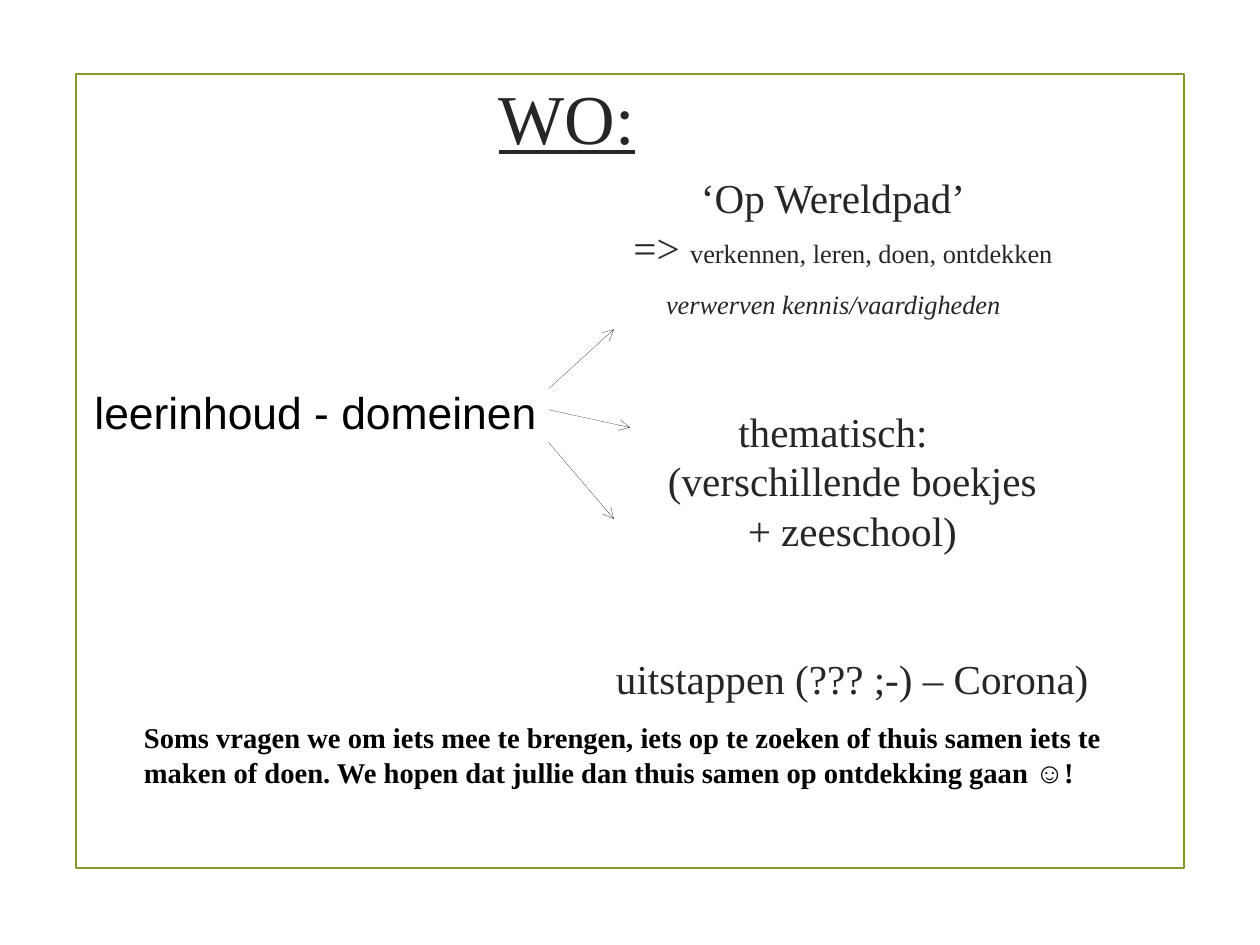
"""Build the WO slide with its learning domains."""
from dataclasses import dataclass
from typing import Optional

import lxml.etree
import pptx
import pptx.dml.color
import pptx.enum.shapes
import pptx.enum.text
import pptx.oxml.ns
import pptx.slide
import pptx.shapes.autoshape
import pptx.shapes.connector
import pptx.util

Cm = pptx.util.Cm
Align = pptx.enum.text.PP_ALIGN
Anchor = pptx.enum.text.MSO_ANCHOR


@dataclass(frozen=True)
class Theme:
    serif: str = "Times New Roman"
    sans: str = "Arial"
    green: str = "83992A"
    dark: str = "262626"
    black: str = "000000"
    title_size: float = 44.1
    body_size: float = 25.9
    detail_size: float = 16.6
    label_size: float = 28
    note_size: float = 18


THEME = Theme()


@dataclass(frozen=True)
class Run:
    text: str
    size: float
    color: str = THEME.dark
    font: str = THEME.serif
    bold: bool = False
    italic: bool = False
    underline: bool = False


@dataclass(frozen=True)
class Paragraph:
    lines: tuple[tuple[Run, ...], ...]
    align: Align = Align.LEFT
    before: float = 0
    after: float = 0
    margin: float = 0
    indent: float = 0


@dataclass(frozen=True)
class TextBox:
    left: float
    top: float
    width: float
    height: float
    paragraphs: tuple[Paragraph, ...]
    anchor: Anchor = Anchor.TOP
    wrap: bool = True


@dataclass(frozen=True)
class Arrow:
    start_y: float
    end_x: float
    end_y: float
    from_label: bool = False


def body_paragraph(*lines: tuple[Run, ...], before: float = 0, after: float = 6.6,
                   indent: float = -0.86) -> Paragraph:
    """Return a centred paragraph in the style of the domain list."""
    return Paragraph(lines, Align.CENTER, before, after, 0.86, indent)


def body_line(text: str) -> tuple[Run, ...]:
    """Return one line in the main body size."""
    return (Run(text, THEME.body_size),)


TITLE = TextBox(0, 0.84, 25.2, 3.5, (
    Paragraph(((Run("WO:", THEME.title_size, underline=True),),), Align.CENTER),
), Anchor.MIDDLE)

DOMAINS = TextBox(11.81, 3.71, 13.41, 12.6, (
    body_paragraph(body_line("‘Op Wereldpad’"), after=0),
    body_paragraph(
        (Run("=> ", THEME.body_size),
         Run("verkennen, leren, doen, ontdekken", THEME.detail_size)),
        indent=-0.43),
    body_paragraph(
        (Run("verwerven kennis/vaardigheden", THEME.detail_size, italic=True),),
        before=4),
    body_paragraph(
        body_line("thematisch:"),
        body_line("(verschillende boekjes"),
        body_line("+ zeeschool)"),
        before=48),
    body_paragraph(
        body_line("uitstappen (??? ;-) – Corona)"), before=55.5, indent=0),
))

LABEL = TextBox(1.85, 8.43, 10.34, 1.35, (
    Paragraph(((Run("leerinhoud - domeinen", THEME.label_size, THEME.black, THEME.sans),),)),
), wrap=False)

NOTE = TextBox(2.95, 15.88, 22.2, 1.8, (
    Paragraph(((Run(
        "Soms vragen we om iets mee te brengen, iets op te zoeken of thuis samen "
        "iets te maken of doen. We hopen dat jullie dan thuis samen op ontdekking "
        "gaan ☺!", THEME.note_size, THEME.black, bold=True),),)),
))

ARROWS = (
    Arrow(8.64, 13.64, 7.32),
    Arrow(9.1, 14.0, 9.5, from_label=True),
    Arrow(9.83, 13.64, 11.53),
)


def rgb(color: str) -> pptx.dml.color.RGBColor:
    """Return a colour object for a hex string."""
    return pptx.dml.color.RGBColor.from_string(color)


def draw_frame(slide: pptx.slide.Slide) -> None:
    """Draw the green frame."""
    frame = slide.shapes.add_shape(
        pptx.enum.shapes.MSO_SHAPE.RECTANGLE, Cm(1.7), Cm(1.65), Cm(24.61), Cm(17.63))
    frame.shadow.inherit = False
    frame.fill.background()
    frame.line.color.rgb = rgb(THEME.green)
    frame.line.width = pptx.util.Pt(1.25)


def draw_text(slide: pptx.slide.Slide, box: TextBox) -> pptx.shapes.autoshape.Shape:
    """Draw a text box run by run."""
    shape = slide.shapes.add_textbox(
        Cm(box.left), Cm(box.top), Cm(box.width), Cm(box.height))
    frame = shape.text_frame
    frame.word_wrap = box.wrap
    frame.vertical_anchor = box.anchor
    for number, item in enumerate(box.paragraphs):
        paragraph = frame.add_paragraph() if number else frame.paragraphs[0]
        paragraph.alignment = item.align
        paragraph.space_before = pptx.util.Pt(item.before)
        paragraph.space_after = pptx.util.Pt(item.after)
        properties = paragraph._p.get_or_add_pPr()
        properties.set("marL", str(Cm(item.margin)))
        properties.set("indent", str(Cm(item.indent)))
        for line_number, line in enumerate(item.lines):
            if line_number:
                paragraph.add_line_break()
            for part in line:
                run = paragraph.add_run()
                run.text = part.text
                run.font.name = part.font
                run.font.size = pptx.util.Pt(part.size)
                run.font.color.rgb = rgb(part.color)
                run.font.bold = part.bold
                run.font.italic = part.italic
                run.font.underline = part.underline
    return shape


def draw_arrow(slide: pptx.slide.Slide, arrow: Arrow,
               label: Optional[pptx.shapes.autoshape.Shape]) -> None:
    """Draw a hairline arrow leaving the right side of the label."""
    connector = slide.shapes.add_connector(
        pptx.enum.shapes.MSO_CONNECTOR.STRAIGHT, Cm(LABEL.left + LABEL.width),
        Cm(arrow.start_y), Cm(arrow.end_x), Cm(arrow.end_y))
    if arrow.from_label:
        connector.begin_connect(label, 3)
    connector.line.color.rgb = rgb(THEME.black)
    line = connector.line._get_or_add_ln()
    line.set("w", "0")
    qn = pptx.oxml.ns.qn
    lxml.etree.SubElement(line, qn("a:tailEnd"), type="arrow")
    lxml.etree.SubElement(connector._element.spPr, qn("a:effectLst"))


def main() -> None:
    """Build and save the presentation."""
    presentation = pptx.Presentation()
    presentation.slide_width, presentation.slide_height = Cm(28), Cm(21)
    slide = presentation.slides.add_slide(presentation.slide_layouts[6])
    draw_frame(slide)
    draw_text(slide, TITLE)
    draw_text(slide, DOMAINS)
    label = draw_text(slide, LABEL)
    for arrow in ARROWS:
        draw_arrow(slide, arrow, label)
    draw_text(slide, NOTE)
    presentation.save("out.pptx")


if __name__ == "__main__":
    main()
